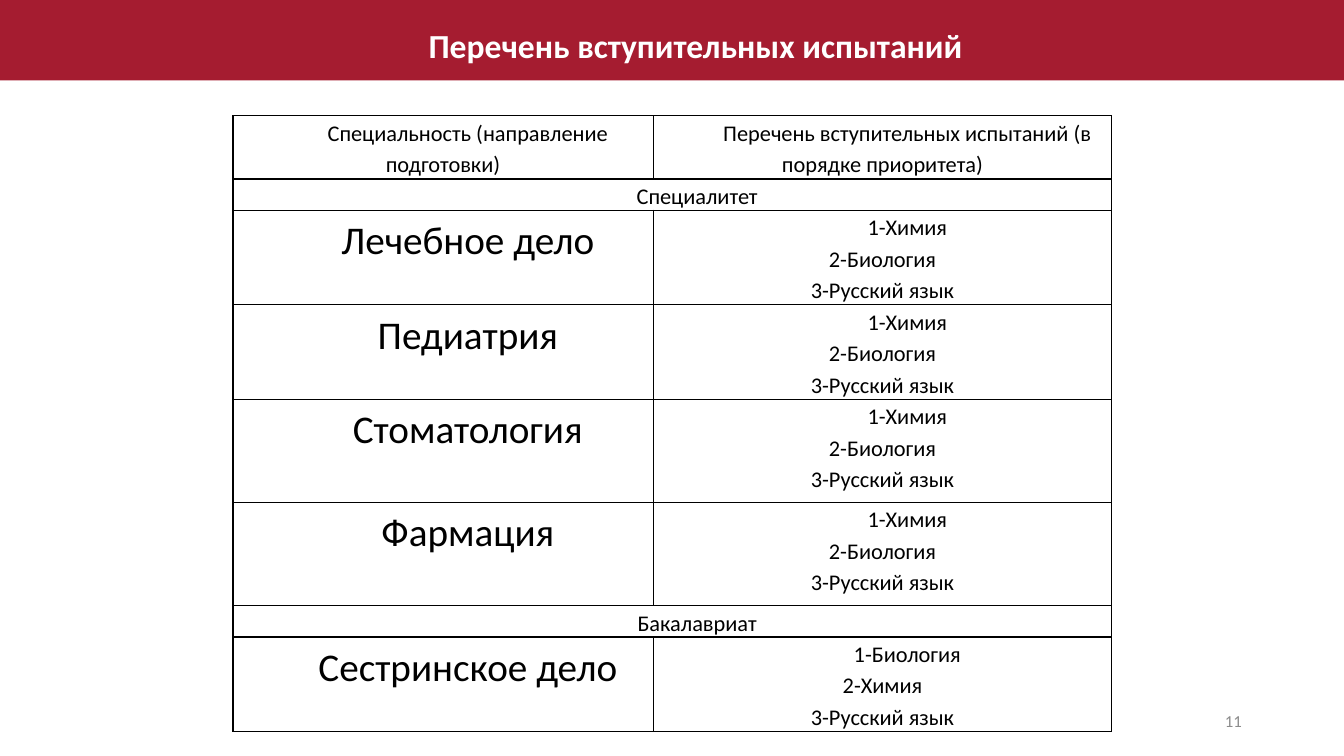
from dataclasses import dataclass

from lxml import etree
from pptx import Presentation
from pptx import util as u
from pptx.dml.color import RGBColor
from pptx.enum import shapes, text
from pptx.oxml.ns import qn


@dataclass(frozen=True)
class Theme:
    font: str = "Calibri"
    banner: str = "A51C30"
    title: str = "FFFFFF"
    ink: str = "000000"
    muted: str = "8C8C8C"
    title_size: int = 24
    program_size: int = 28
    body_size: int = 16
    number_size: int = 12
    border_width: int = 1


THEME = Theme()
HEADINGS = (
    "Специальность (направление подготовки)",
    "Перечень вступительных испытаний (в порядке приоритета)",
)
CHEMISTRY_FIRST = ("1-Химия", "2-Биология", "3-Русский язык")
BIOLOGY_FIRST = ("1-Биология", "2-Химия", "3-Русский язык")

# Each level of study lists its programs: name, exams, row height in cm
LEVELS = {
    "Специалитет": (
        ("Лечебное дело", CHEMISTRY_FIRST, 2.38),
        ("Педиатрия", CHEMISTRY_FIRST, 2.38),
        ("Стоматология", CHEMISTRY_FIRST, 2.6),
        ("Фармация", CHEMISTRY_FIRST, 2.6),
    ),
    "Бакалавриат": (("Сестринское дело", BIOLOGY_FIRST, 2.38),),
}
HEADING_HEIGHT = 1.59
LEVEL_HEIGHT = 0.79
COLUMN_WIDTHS = (10.59, 11.56)


def write(para, words, size, color, align, bold=False):
    para.text = words
    para.alignment = align
    para.font.name = THEME.font
    para.font.size = u.Pt(size)
    para.font.bold = bold
    para.font.color.rgb = RGBColor.from_string(color)


def add_label(page, box, words, size, color, align, bold=False):
    frame = page.shapes.add_textbox(*map(u.Cm, box)).text_frame
    frame.word_wrap = True
    frame.vertical_anchor = text.MSO_ANCHOR.MIDDLE
    write(frame.paragraphs[0], words, size, color, align, bold)


def add_banner(page, box, title):
    left, top, width, height = box
    band = page.shapes.add_shape(shapes.MSO_SHAPE.RECTANGLE, *map(u.Cm, box))
    band.shadow.inherit = False
    band.fill.solid()
    band.fill.fore_color.rgb = RGBColor.from_string(THEME.banner)
    band.line.fill.background()
    # The title sits a little right of the middle and below it
    add_label(page, (left + 3.76, top + 0.03, width - 6.33, height + 0.28), title,
              THEME.title_size, THEME.title, text.PP_ALIGN.CENTER, bold=True)


def add_borders(cell):
    properties = cell._tc.get_or_add_tcPr()
    for side in ("a:lnL", "a:lnR", "a:lnT", "a:lnB"):
        line = etree.SubElement(properties, qn(side), w=str(u.Pt(THEME.border_width)))
        fill = etree.SubElement(line, qn("a:solidFill"))
        etree.SubElement(fill, qn("a:srgbClr"), val=THEME.ink)


def fill_cell(cell, words, size=THEME.body_size):
    cell.margin_left = cell.margin_right = u.Cm(0.18)
    cell.margin_top = cell.margin_bottom = 0
    para = cell.text_frame.paragraphs[0]
    write(para, words, size, THEME.ink, text.PP_ALIGN.CENTER)
    para.line_spacing = 1.15
    para.space_after = u.Pt(10)
    properties = para._p.get_or_add_pPr()
    properties.set("marL", "0")
    properties.set("indent", str(u.Cm(1.25)))


def add_exam_table(page, left, top):
    # Rows: the words of each cell and the height; a single cell spans the row
    rows = [(HEADINGS, HEADING_HEIGHT)]
    for level, programs in LEVELS.items():
        rows.append(((level,), LEVEL_HEIGHT))
        rows += [((name, "\v".join(exams)), height) for name, exams, height in programs]

    width = sum(COLUMN_WIDTHS)
    height = sum(row_height for _, row_height in rows)
    table = page.shapes.add_table(len(rows), len(COLUMN_WIDTHS),
                                  *map(u.Cm, (left, top, width, height))).table
    table.first_row = table.horz_banding = False
    for column, column_width in zip(table.columns, COLUMN_WIDTHS):
        column.width = u.Cm(column_width)

    for index, (words, row_height) in enumerate(rows):
        table.rows[index].height = u.Cm(row_height)
        cells = table.rows[index].cells
        for cell in cells:
            add_borders(cell)
            cell.fill.background()
        if len(words) == 1:
            table.cell(index, 0).merge(table.cell(index, 1))
        for column, cell_words in enumerate(words):
            is_program = index > 0 and column == 0 and len(words) == 2
            size = THEME.program_size if is_program else THEME.body_size
            fill_cell(table.cell(index, column), cell_words, size)


def add_exam_slide(deck):
    page = deck.slides.add_slide(deck.slide_layouts[6])
    add_label(page, (23.93, 17.65, 7.62, 1.02), "11",
              THEME.number_size, THEME.muted, text.PP_ALIGN.RIGHT)
    add_banner(page, (0, -0.08, 33.87, 2.11), "Перечень вступительных испытаний")
    add_exam_table(page, 5.87, 2.92)


def main():
    deck = Presentation()
    deck.slide_width, deck.slide_height = u.Cm(33.87), u.Cm(19.05)
    add_exam_slide(deck)
    deck.save("out.pptx")


if __name__ == "__main__":
    main()
